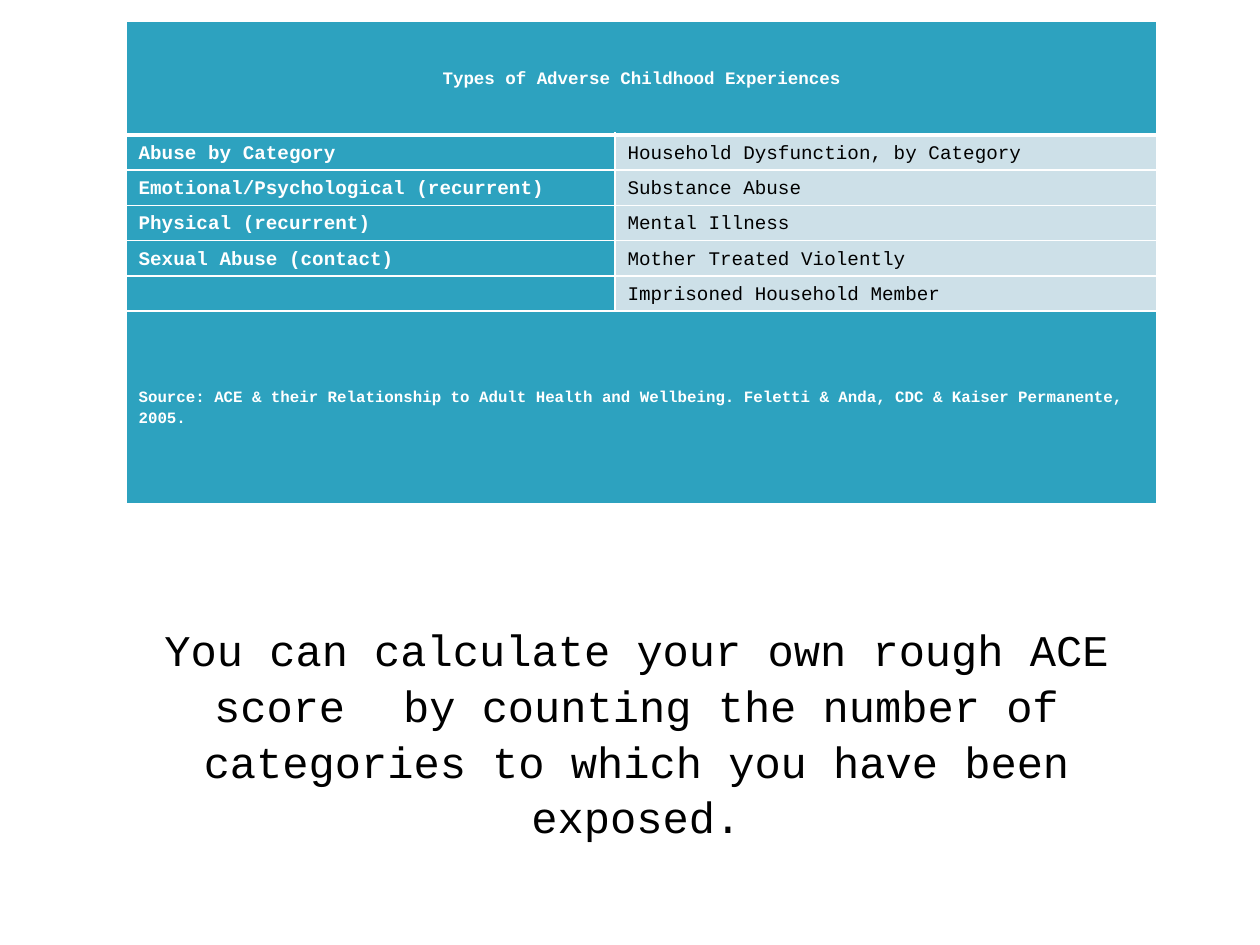
from lxml.etree import SubElement, Element
from pptx import Presentation
from pptx.dml.color import RGBColor as Rgb
from pptx.enum.text import MSO_ANCHOR as Anchor, PP_ALIGN as Align
from pptx.oxml.ns import qn
from pptx.util import Pt

COLORS = {"teal": "2DA2BF", "pale": "CDE0E8", "white": "FFFFFF", "black": "000000"}
FONT = "Courier New"

HEADING = "Types of Adverse Childhood Experiences"
SOURCE = ("Source: ACE & their Relationship to Adult Health and Wellbeing. "
          "Feletti & Anda, CDC & Kaiser Permanente, 2005.")
CATEGORIES = [
    ("Abuse by Category", "Household Dysfunction, by Category"),
    ("Emotional/Psychological (recurrent)", "Substance Abuse"),
    ("Physical (recurrent)", "Mental Illness"),
    ("Sexual Abuse (contact)", "Mother Treated Violently"),
    ("", "Imprisoned Household Member"),
]
MESSAGE = ("You can calculate your own rough ACE score \tby counting the number "
           "of categories to which you have been exposed.")


class SlideBuilder:
    def __init__(self, page):
        self.page = page

    def add_text(self, para, text, size, color, bold=False, align=Align.LEFT, spacing=1.15):
        para.alignment = align
        para.line_spacing = spacing
        if not text:
            # An empty cell still needs a small line height
            SubElement(para._p, qn("a:endParaRPr"), sz=str(size * 100))
            return
        span = para.add_run()
        span.text = text
        span.font.name = FONT
        span.font.size = Pt(size)
        span.font.bold = bold
        span.font.color.rgb = Rgb.from_string(COLORS[color])

    def text_box(self, left, top, width, height, text, size, inset_top):
        box = self.page.shapes.add_textbox(Pt(left), Pt(top), Pt(width), Pt(height))
        frame = box.text_frame
        frame.word_wrap = True
        frame.vertical_anchor = Anchor.TOP
        frame.margin_top = Pt(inset_top)
        self.add_text(frame.paragraphs[0], text, size, "black",
                      align=Align.CENTER, spacing=1.06)

    def table(self, left, top, widths, heights):
        frame = self.page.shapes.add_table(len(heights), len(widths), Pt(left), Pt(top),
                                           Pt(sum(widths)), Pt(sum(heights)))
        table = frame.table
        for column, width in zip(table.columns, widths):
            column.width = Pt(width)
        for row, height in zip(table.rows, heights):
            row.height = Pt(height)
        return table

    def cell(self, cell, fill, top_line=1, bottom_line=1):
        cell.fill.solid()
        cell.fill.fore_color.rgb = Rgb.from_string(COLORS[fill])
        cell.vertical_anchor = Anchor.MIDDLE
        cell.margin_left = cell.margin_right = Pt(7.2)
        cell.margin_top = cell.margin_bottom = 0
        # Borders come before the fill in the cell properties
        properties = cell._tc.get_or_add_tcPr()
        sides = {"lnL": 1, "lnR": 1, "lnT": top_line, "lnB": bottom_line}
        for index, (side, width) in enumerate(sides.items()):
            line = Element(qn(f"a:{side}"), w=str(Pt(width)))
            solid = SubElement(line, qn("a:solidFill"))
            SubElement(solid, qn("a:srgbClr"), val=COLORS["white"])
            properties.insert(index, line)


def main():
    deck = Presentation()
    deck.slide_width, deck.slide_height = Pt(720), Pt(540)
    builder = SlideBuilder(deck.slides.add_slide(deck.slide_layouts[6]))

    # Closing message
    builder.text_box(72, 318.25, 583.2, 138.25, MESSAGE, 25, inset_top=36)

    # Table of experiences
    heights = [64.8] + [20.16] * len(CATEGORIES) + [110.2]
    table = builder.table(72, 12.25, [279.4, 309.6], heights)
    last = len(heights) - 1

    # Heading and source rows span both columns
    for row, text, size, align in ((0, HEADING, 10, Align.CENTER),
                                   (last, SOURCE, 9, Align.LEFT)):
        table.cell(row, 0).merge(table.cell(row, 1))
        for column in range(2):
            builder.cell(table.cell(row, column), "teal", bottom_line=1 if row else 3)
        builder.add_text(table.cell(row, 0).text_frame.paragraphs[0], text, size,
                         "white", bold=True, align=align)

    # Category rows
    looks = [("teal", "white", True), ("pale", "black", False)]
    for row, texts in enumerate(CATEGORIES, start=1):
        for column, (text, (fill, color, bold)) in enumerate(zip(texts, looks)):
            cell = table.cell(row, column)
            builder.cell(cell, fill, top_line=3 if row == 1 else 1)
            builder.add_text(cell.text_frame.paragraphs[0], text, 11, color, bold)

    deck.save("out.pptx")


if __name__ == "__main__":
    main()
